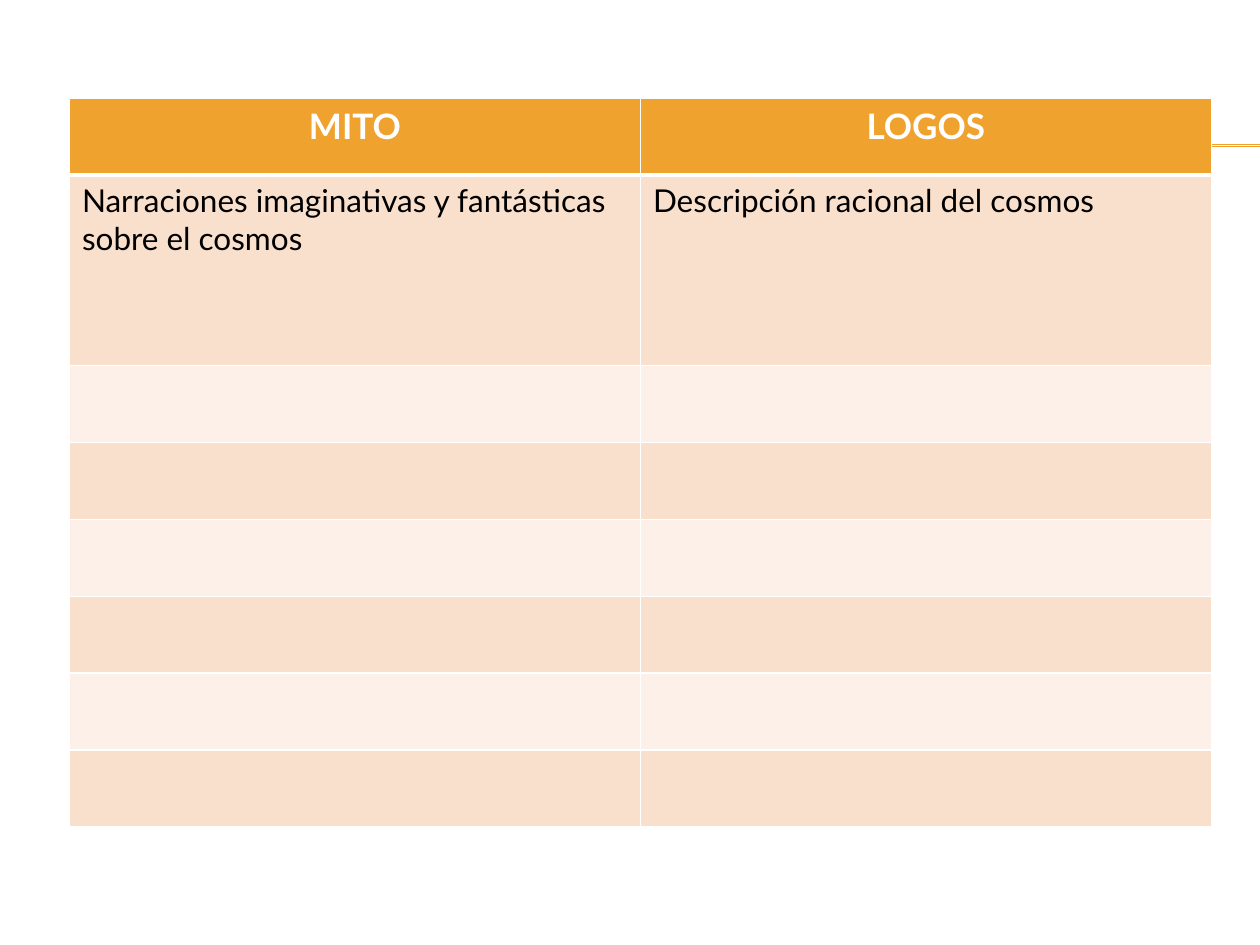
from lxml import etree
from pptx import Presentation
from pptx.dml.color import RGBColor
from pptx.enum.shapes import MSO_CONNECTOR
from pptx.enum.text import PP_ALIGN
from pptx.oxml import parse_xml
from pptx.oxml.ns import nsdecls, qn
from pptx.util import Cm, Pt

ACCENT, WHITE, BLACK = "F0A22E", "FFFFFF", "000000"
BANDS = ("F9E0CD", "FCF0E8")

HEADINGS = ("MITO", "LOGOS")
COMPARISON = ("Narraciones imaginativas y fantásticas sobre el cosmos",
              "Descripción racional del cosmos")
EMPTY_ROWS = 6


def color(hex_code):
    return RGBColor.from_string(hex_code)


class SlideBuilder:
    """Holds the style and the slide that is being filled."""

    font_name = "Lato"
    heading_size, body_size = 20, 18
    border, header_border = 1, 3

    def __init__(self, slide):
        self.slide = slide

    def rule(self, left, right, y):
        line = self.slide.shapes.add_connector(
            MSO_CONNECTOR.STRAIGHT, Cm(left), Cm(y), Cm(right), Cm(y))
        line.line.color.rgb = color(ACCENT)
        line.line.width = Pt(0.75)
        etree.SubElement(line._element.spPr, qn("a:effectLst"))

    def table(self, left, top, column_width, heights, rows):
        columns = len(rows[0])
        table = self.slide.shapes.add_table(
            len(rows), columns, Cm(left), Cm(top),
            Cm(column_width * columns), Cm(sum(heights))).table
        for column in table.columns:
            column.width = Cm(column_width)
        for index, (height, texts) in enumerate(zip(heights, rows)):
            table.rows[index].height = Cm(height)
            for cell, text in zip(table.rows[index].cells, texts):
                self.cell(cell, text, index)

    def cell(self, cell, text, row):
        heading = row == 0
        cell.fill.solid()
        cell.fill.fore_color.rgb = color(ACCENT if heading else BANDS[(row - 1) % 2])
        self.borders(cell, top=self.header_border if row == 1 else self.border,
                     bottom=self.header_border if heading else self.border)
        if not text:
            return
        paragraph = cell.text_frame.paragraphs[0]
        paragraph.alignment = PP_ALIGN.CENTER if heading else PP_ALIGN.LEFT
        run = paragraph.add_run()
        run.text = text
        run.font.name = self.font_name
        run.font.size = Pt(self.heading_size if heading else self.body_size)
        run.font.bold = heading
        run.font.color.rgb = color(WHITE if heading else BLACK)

    def borders(self, cell, top, bottom):
        """Draw white edges; they must precede the fill in the cell properties."""
        properties = cell._tc.get_or_add_tcPr()
        edges = (("L", self.border), ("R", self.border), ("T", top), ("B", bottom))
        for position, (side, width) in enumerate(edges):
            properties.insert(position, parse_xml(
                f'<a:ln{side} {nsdecls("a")} w="{Pt(width)}"><a:solidFill>'
                f'<a:srgbClr val="{WHITE}"/></a:solidFill></a:ln{side}>'))


def main():
    deck = Presentation()
    deck.slide_width, deck.slide_height = Cm(25.4), Cm(19.05)
    builder = SlideBuilder(deck.slides.add_slide(deck.slide_layouts[6]))

    for y in (2.92, 2.95):
        builder.rule(1.42, 25.4, y)

    rows = [HEADINGS, COMPARISON] + [("", "")] * EMPTY_ROWS
    heights = [1.55, 3.84] + [1.55] * EMPTY_ROWS
    builder.table(1.4, 1.98, 11.51, heights, rows)

    deck.save("out.pptx")


if __name__ == "__main__":
    main()
